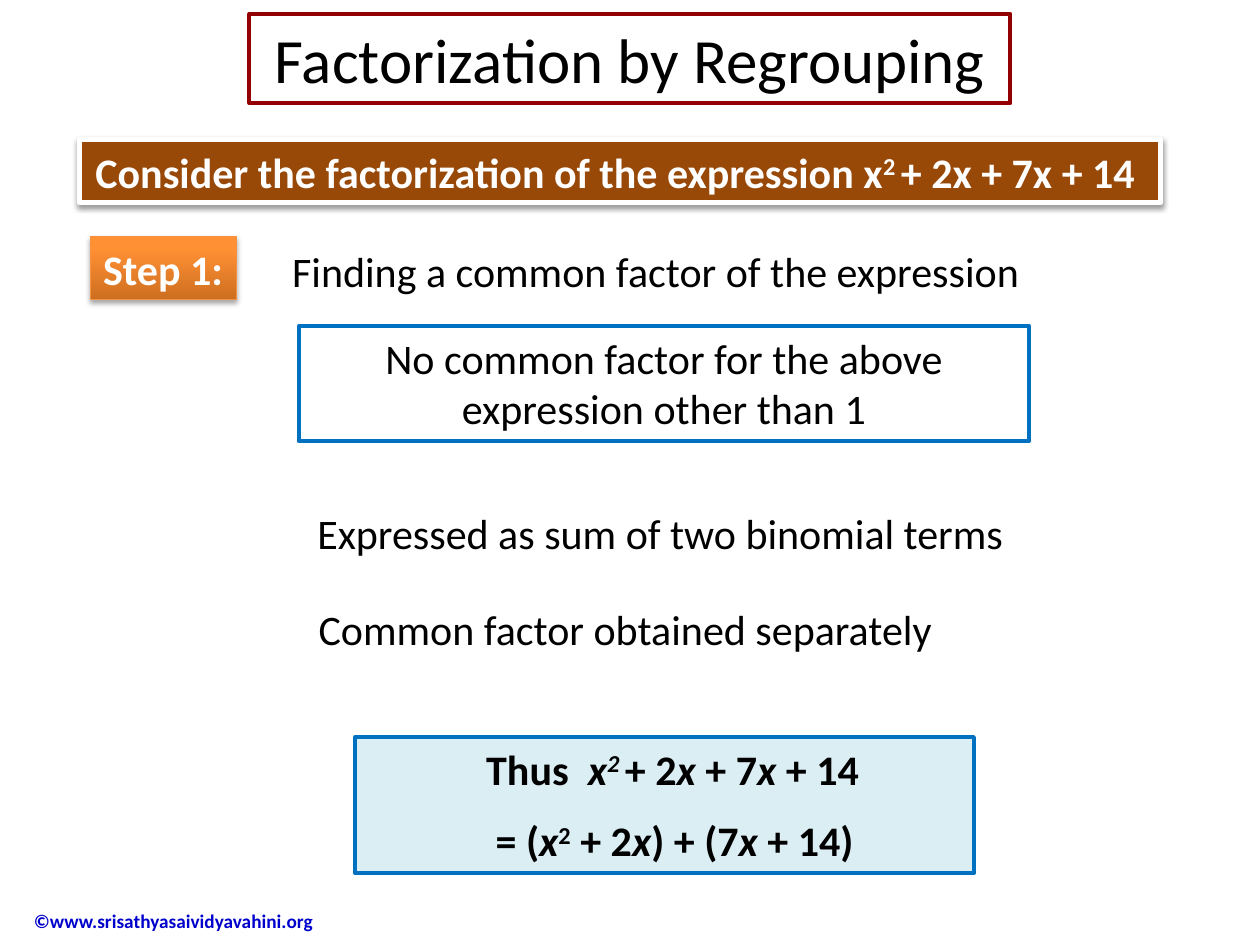
from lxml.etree import SubElement
from pptx import Presentation
from pptx.dml.color import RGBColor
from pptx.enum.shapes import MSO_SHAPE
from pptx.enum.text import MSO_ANCHOR, MSO_AUTO_SIZE, PP_ALIGN
from pptx.oxml import parse_xml
from pptx.oxml.ns import nsdecls, qn
from pptx.util import Pt

BLUE = "0070C0"
WHITE = "FFFFFF"


def color(value):
    return RGBColor.from_string(value)


class Deck:
    font = "Calibri"
    size = 24

    def __init__(self, width, height):
        self.prs = Presentation()
        self.prs.slide_width, self.prs.slide_height = Pt(width), Pt(height)
        self.slide = self.prs.slides.add_slide(self.prs.slide_layouts[6])

    def set_text(self, sp, paragraphs, size=None, ink="000000", bold=False,
                 align=PP_ALIGN.LEFT, wrap=True, indent=0, gap=0):
        """Each paragraph is a list of (text, style); style holds i or ^ (raised)."""
        tf = sp.text_frame
        tf.word_wrap = wrap
        tf.auto_size = MSO_AUTO_SIZE.SHAPE_TO_FIT_TEXT
        tf.vertical_anchor = MSO_ANCHOR.TOP
        for n, runs in enumerate(paragraphs):
            p = tf.add_paragraph() if n else tf.paragraphs[0]
            p.alignment = align
            if indent:
                p._p.get_or_add_pPr().set("marL", str(Pt(indent)))
                p._p.get_or_add_pPr().set("indent", "0")
            if gap:
                p.space_before = Pt(gap if n else 0)
                p.space_after = Pt(gap)
            for text, style in runs:
                r = p.add_run()
                r.text = text
                r.font.name = self.font
                r.font.size = Pt(size or self.size)
                r.font.bold = bold
                r.font.italic = "i" in style
                r.font.color.rgb = color(ink)
                if "^" in style:
                    r.font._element.set("baseline", "30000")

    def text(self, left, top, width, height, words, **style):
        sp = self.slide.shapes.add_textbox(Pt(left), Pt(top), Pt(width), Pt(height))
        self.set_text(sp, [[(words, "")]], **style)
        return sp

    def box(self, left, top, width, height, paragraphs, line, weight=2.25,
            fill=None, align=PP_ALIGN.CENTER, **style):
        sp = self.slide.shapes.add_shape(
            MSO_SHAPE.RECTANGLE, Pt(left), Pt(top), Pt(width), Pt(height))
        sp.shadow.inherit = False
        if fill:
            sp.fill.solid()
            sp.fill.fore_color.rgb = color(fill)
        else:
            sp.fill.background()
        sp.line.color.rgb = color(line)
        sp.line.width = Pt(weight)
        self.set_text(sp, paragraphs, align=align, **style)
        return sp

    def shadow(self, sp, distance, opacity):
        effects = sp._element.spPr.find(qn("a:effectLst"))
        shade = SubElement(effects, qn("a:outerShdw"), blurRad=str(Pt(3.1)),
                           dist=str(Pt(distance)), dir="5400000", rotWithShape="0")
        black = SubElement(shade, qn("a:srgbClr"), val="000000")
        SubElement(black, qn("a:alpha"), val=str(opacity * 1000))

    def gradient(self, sp, stops):
        marks = "".join(f'<a:gs pos="{pos * 1000}"><a:srgbClr val="{value}"/></a:gs>'
                        for pos, value in stops)
        fill = parse_xml(f'<a:gradFill {nsdecls("a")} rotWithShape="1"><a:gsLst>{marks}'
                         '</a:gsLst><a:lin ang="16200000" scaled="0"/></a:gradFill>')
        spPr = sp._element.spPr
        spPr.replace(spPr.find(qn("a:noFill")), fill)


def main():
    deck = Deck(720, 540)

    # Footer
    footer = deck.text(-23.76, 511.2, 217.44, 29.52, "©www.srisathyasaividyavahini.org",
                       size=11, ink="0000CC", bold=True, indent=36)
    footer.text_frame.auto_size = MSO_AUTO_SIZE.NONE
    footer.text_frame.vertical_anchor = MSO_ANCHOR.MIDDLE

    # Expression banner and title
    banner = deck.box(45.36, 79.92, 617.76, 36,
                      [[("Consider the factorization of the expression x", ""),
                        ("2 ", "^"), ("+ 2x + 7x + 14 ", "")]],
                      WHITE, 3, fill="984807", ink=WHITE, bold=True)
    deck.shadow(banner, 1.6, 38)
    deck.box(142.56, 7.92, 434.88, 51.12, [[("Factorization by Regrouping", "")]],
             "920000", size=36, wrap=False)

    # Step label
    step = deck.box(51.84, 135.36, 83.52, 36, [[("Step 1:", "")]], "F69240", 0.75,
                    align=PP_ALIGN.LEFT, ink=WHITE, bold=True, wrap=False)
    deck.gradient(step, [(0, "CC6E20"), (80, "FF9034"), (100, "FF9136")])
    deck.shadow(step, 1.8, 35)

    # Explanation
    for left, top, width, words in [
        (159.84, 136.8, 435.6, "Finding a common factor of the expression"),
        (174.24, 286.56, 407.52, "Expressed as sum of two binomial terms"),
        (174.96, 341.28, 370.08, "Common factor obtained separately"),
    ]:
        deck.text(left, top, width, 36, words)
    deck.box(170.64, 186.48, 417.6, 65.52,
             [[("No common factor for the above expression other than 1", "")]], BLUE)

    # Result
    x = ("x", "i")
    deck.box(203.04, 421.2, 353.52, 77.76,
             [[("Thus  ", ""), x, ("2 ", "i^"), ("+ 2", ""), x, (" + 7", ""), x,
               (" + 14 ", "")],
              [(" = (", ""), x, ("2", "^"), (" + 2", ""), x, (") + (7", ""), x,
               (" + 14)", "")]],
             BLUE, fill="DBEEF4", align=PP_ALIGN.JUSTIFY, bold=True, indent=67.68, gap=6)

    deck.prs.save("out.pptx")


if __name__ == "__main__":
    main()
